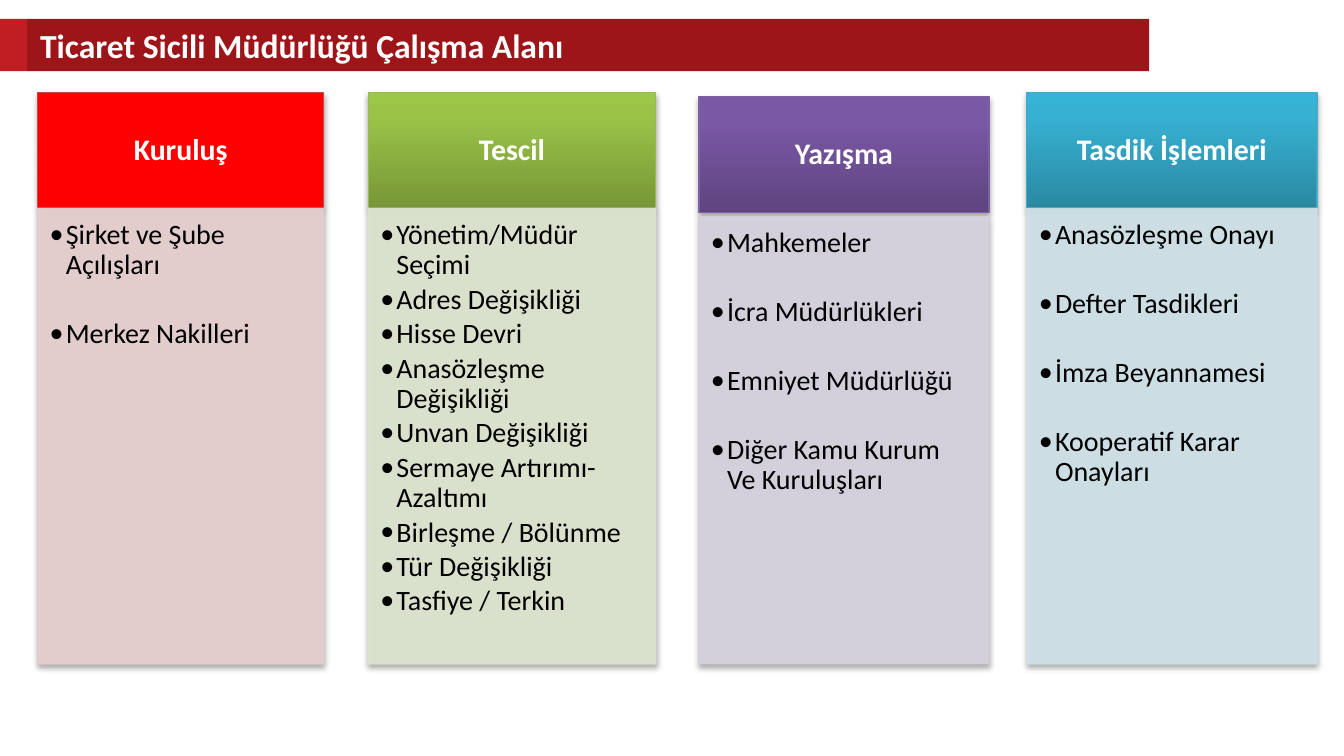
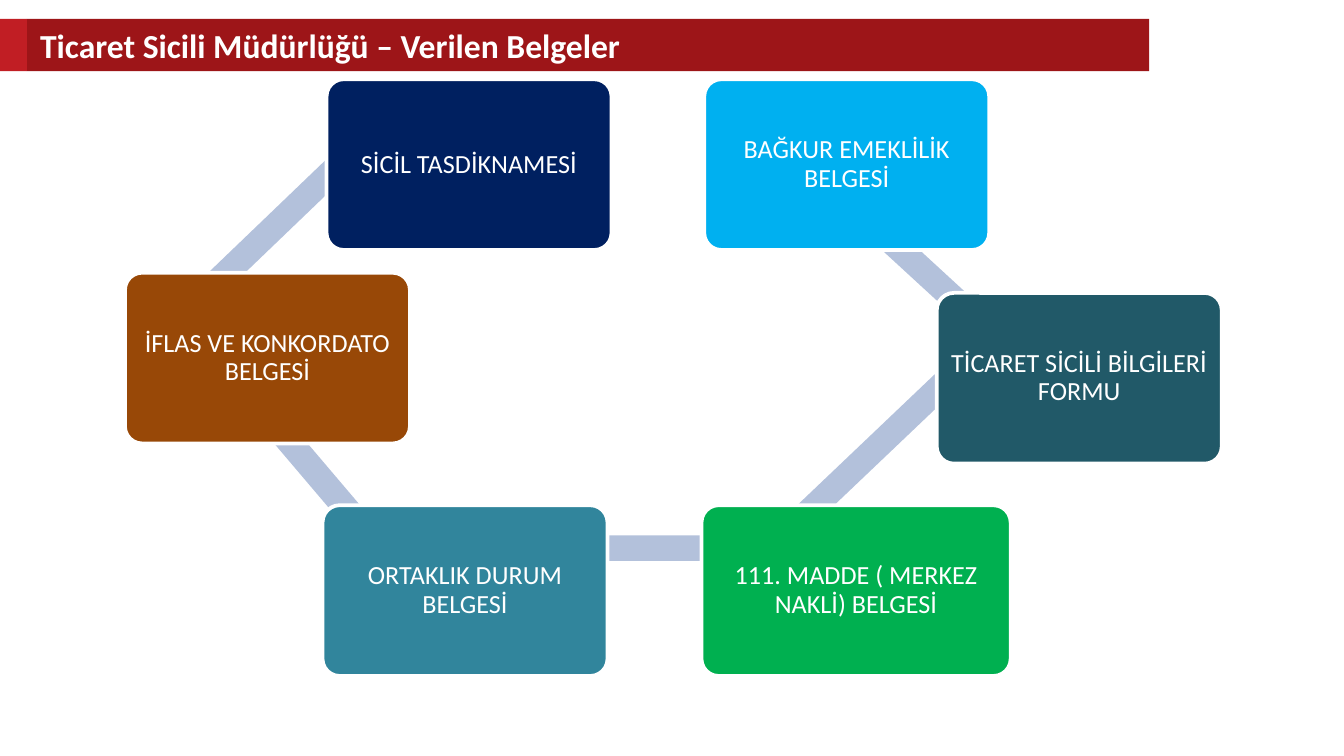
from copy import deepcopy
from math import atan2, degrees, hypot

from lxml.etree import SubElement
from pptx import Presentation
from pptx.dml.color import RGBColor
from pptx.enum.shapes import MSO_SHAPE
from pptx.enum.text import MSO_ANCHOR, MSO_AUTO_SIZE, PP_ALIGN
from pptx.oxml.ns import qn
from pptx.util import Inches, Pt

# Shared style
SLIDE_WIDTH = 10
SLIDE_HEIGHT = SLIDE_WIDTH * 9 / 16
FONT = "Calibri"
WHITE = RGBColor(0xFF, 0xFF, 0xFF)
BLACK = RGBColor(0x00, 0x00, 0x00)
BAND_RED = RGBColor(0x9D, 0x15, 0x18)
TAB_RED = RGBColor(0xC1, 0x1E, 0x24)
LINK_BLUE = RGBColor(0xB3, 0xC1, 0xDB)
BAND_TOP, BAND_HEIGHT, TAB_WIDTH = 0.14, 0.39, 0.2

# Slide 1: columns of work areas
WORK_TITLE = "Ticaret Sicili Müdürlüğü Çalışma Alanı"
TIGHT, LOOSE = 2.25, 20.75  # points after each item
COLUMNS = [
    dict(head="Kuruluş", left=0.28, width=2.13, drop=0, gap=LOOSE,
         head_fill=["FF0000"], head_line="BF4C48",
         body_fill="E8D0D0", body_line="E3CBCB",
         items=["Şirket ve Şube Açılışları", "Merkez Nakilleri"]),
    dict(head="Tescil", left=2.74, width=2.14, drop=0, gap=TIGHT,
         head_fill=["779737", "9BC348", "9DC746"], head_line="98B955",
         body_fill="DEE7D1", body_line="D9E2CC",
         items=["Yönetim/Müdür Seçimi", "Adres Değişikliği", "Hisse Devri",
                "Anasözleşme Değişikliği", "Unvan Değişikliği",
                "Sermaye Artırımı- Azaltımı", "Birleşme / Bölünme",
                "Tür Değişikliği", "Tasfiye / Terkin"]),
    dict(head="Yazışma", left=5.2, width=2.16, drop=0.03, gap=LOOSE,
         head_fill=["5F4480", "7B58A6", "7C57A8"], head_line="7D60A0",
         body_fill="D8D3E0", body_line="D3CEDB",
         items=["Mahkemeler", "İcra Müdürlükleri", "Emniyet Müdürlüğü",
                "Diğer Kamu Kurum Ve Kuruluşları"]),
    dict(head="Tasdik İşlemleri", left=7.64, width=2.16, drop=0, gap=LOOSE,
         head_fill=["2A88A2", "37B1D2", "34B4D6"], head_line="46AAC5",
         body_fill="D0E3EA", body_line="CBDEE5",
         items=["Anasözleşme Onayı", "Defter Tasdikleri", "İmza Beyannamesi",
                "Kooperatif Karar Onayları"]),
]
HEAD_TOP, HEAD_HEIGHT, BODY_BOTTOM = 0.69, 0.86, 4.94
GRADIENT_STOPS = (0, 0.8, 1)
BULLET_INDENT = 0.12

# Slide 2: chain of documents (text, left, top, width, fill)
DOCUMENTS_TITLE = "Ticaret Sicili Müdürlüğü – Verilen Belgeler"
DOCUMENTS = [
    ("SİCİL TASDİKNAMESİ", 2.43, 0.59, 2.12, RGBColor(0x00, 0x20, 0x60)),
    ("İFLAS VE KONKORDATO BELGESİ", 0.93, 2.03, 2.12, RGBColor(0x98, 0x48, 0x07)),
    ("ORTAKLIK DURUM BELGESİ", 2.4, 3.76, 2.12, RGBColor(0x31, 0x85, 0x9C)),
    ("111. MADDE ( MERKEZ NAKLİ) BELGESİ", 5.22, 3.76, 2.3, RGBColor(0x00, 0xB0, 0x50)),
    ("TİCARET SİCİLİ BİLGİLERİ FORMU", 6.97, 2.18, 2.12, RGBColor(0x21, 0x59, 0x68)),
    ("BAĞKUR EMEKLİLİK BELGESİ", 5.24, 0.59, 2.12, RGBColor(0x00, 0xB0, 0xF0)),
]
CARD_HEIGHT, LINK_THICKNESS = 1.27, 0.19


def add_block(slide, left, top, width, height, fill, line=None,
              line_width=0.75, kind=MSO_SHAPE.RECTANGLE):
    block = slide.shapes.add_shape(
        kind, Inches(left), Inches(top), Inches(width), Inches(height))
    block.shadow.inherit = False
    block.fill.solid()
    block.fill.fore_color.rgb = fill
    if line is None:
        block.line.fill.background()
    else:
        block.line.color.rgb = line
        block.line.width = Pt(line_width)
    return block


def set_insets(frame, left, top, right, bottom):
    frame.word_wrap = True
    frame.margin_left, frame.margin_top = Inches(left), Inches(top)
    frame.margin_right, frame.margin_bottom = Inches(right), Inches(bottom)


def style_font(paragraph, size, color, bold=False):
    font = paragraph.font
    font.name, font.size, font.bold = FONT, Pt(size), bold
    font.color.rgb = color


def write_centred(block, text, size, bold, insets):
    frame = block.text_frame
    set_insets(frame, *insets)
    frame.vertical_anchor = MSO_ANCHOR.MIDDLE
    paragraph = frame.paragraphs[0]
    paragraph.text = text
    paragraph.alignment = PP_ALIGN.CENTER
    paragraph.line_spacing = 0.9
    style_font(paragraph, size, WHITE, bold)


def write_bullets(block, items, gap):
    frame = block.text_frame
    set_insets(frame, 0.09, 0.09, 0.12, 0.13)
    frame.vertical_anchor = MSO_ANCHOR.TOP
    for index, item in enumerate(items):
        paragraph = frame.add_paragraph() if index else frame.paragraphs[0]
        paragraph.text = item
        paragraph.level = 1
        paragraph.alignment = PP_ALIGN.LEFT
        paragraph.line_spacing = 0.9
        paragraph.space_after = Pt(gap)
        properties = paragraph._p.get_or_add_pPr()
        properties.set("marL", str(Inches(BULLET_INDENT)))
        properties.set("indent", str(-Inches(BULLET_INDENT)))
        SubElement(properties, qn("a:buFont")).set("typeface", FONT)
        SubElement(properties, qn("a:buChar")).set("char", "•")
        style_font(paragraph, 15, BLACK)


def set_alpha(color_element, percent):
    SubElement(color_element, qn("a:alpha")).set("val", str(percent * 1000))


def add_soft_shadow(block):
    effects = block._element.spPr.find(qn("a:effectLst"))
    shadow = SubElement(effects, qn("a:outerShdw"), blurRad=str(Pt(3.1)),
                        dist=str(Pt(1.8)), dir="5400000", rotWithShape="0")
    set_alpha(SubElement(shadow, qn("a:srgbClr"), val="000000"), 35)


def fill_upward_gradient(block, colors):
    block.fill.gradient()
    block.fill.gradient_angle = 90
    stops = block._element.spPr.find(qn("a:gradFill")).find(qn("a:gsLst"))
    stops.append(deepcopy(stops[-1]))
    for stop, color, position in zip(block.fill.gradient_stops, colors, GRADIENT_STOPS):
        stop.color.rgb = RGBColor.from_string(color)
        stop.position = position


def add_bands(slide):
    add_block(slide, TAB_WIDTH, BAND_TOP, 8.35, BAND_HEIGHT, BAND_RED)
    add_block(slide, 0, BAND_TOP, TAB_WIDTH, BAND_HEIGHT, TAB_RED)


def add_title(slide, text):
    title = slide.shapes.add_textbox(
        Inches(TAB_WIDTH), Inches(BAND_TOP), Inches(8.32), Inches(0.4))
    frame = title.text_frame
    frame.word_wrap = True
    frame.auto_size = MSO_AUTO_SIZE.SHAPE_TO_FIT_TEXT
    frame.text = text
    style_font(frame.paragraphs[0], 18, WHITE, True)


def add_column(slide, column):
    left, width, drop = column["left"], column["width"], column["drop"]
    colors = column["head_fill"]

    # Header
    head = add_block(slide, left, HEAD_TOP + drop, width, HEAD_HEIGHT,
                     RGBColor.from_string(colors[0]),
                     RGBColor.from_string(column["head_line"]))
    if len(colors) > 1:
        fill_upward_gradient(head, colors)
    add_soft_shadow(head)
    write_centred(head, column["head"], 16, True, (0.12, 0.07, 0.12, 0.07))

    # List
    body_top = HEAD_TOP + HEAD_HEIGHT + 2 * drop
    body = add_block(slide, left, body_top, width, BODY_BOTTOM - body_top,
                     RGBColor.from_string(column["body_fill"]),
                     RGBColor.from_string(column["body_line"]))
    for color_element in list(body._element.spPr.iter(qn("a:srgbClr"))):
        set_alpha(color_element, 90)
    add_soft_shadow(body)
    write_bullets(body, column["items"], column["gap"])


def joint(document):
    """Point inside a card where its links meet."""
    _, left, top, width, _ = document
    return left + (width - CARD_HEIGHT) / 2, top + CARD_HEIGHT / 4


def add_link(slide, start, end):
    (x1, y1), (x2, y2) = joint(start), joint(end)
    length = hypot(x2 - x1, y2 - y1)
    link = add_block(slide, (x1 + x2 - length) / 2, (y1 + y2 - LINK_THICKNESS) / 2,
                     length, LINK_THICKNESS, LINK_BLUE)
    link.rotation = degrees(atan2(y2 - y1, x2 - x1)) % 360


def add_card(slide, document):
    text, left, top, width, fill = document
    card = add_block(slide, left, top, width, CARD_HEIGHT, fill, WHITE, 2,
                     MSO_SHAPE.ROUNDED_RECTANGLE)
    card.adjustments[0] = 0.1
    write_centred(card, text, 14, False, (0.06,) * 4)


def main():
    deck = Presentation()
    deck.slide_width, deck.slide_height = Inches(SLIDE_WIDTH), Inches(SLIDE_HEIGHT)
    blank = deck.slide_layouts[6]

    # Work areas
    work = deck.slides.add_slide(blank)
    add_bands(work)
    for column in COLUMNS:
        add_column(work, column)
    add_title(work, WORK_TITLE)

    # Documents issued: each link lies under the cards it joins
    issued = deck.slides.add_slide(blank)
    add_bands(issued)
    for index, document in enumerate(DOCUMENTS):
        for following in DOCUMENTS[index + 1:index + 2]:
            add_link(issued, document, following)
        add_card(issued, document)
    add_title(issued, DOCUMENTS_TITLE)

    deck.save("out.pptx")


if __name__ == "__main__":
    main()
